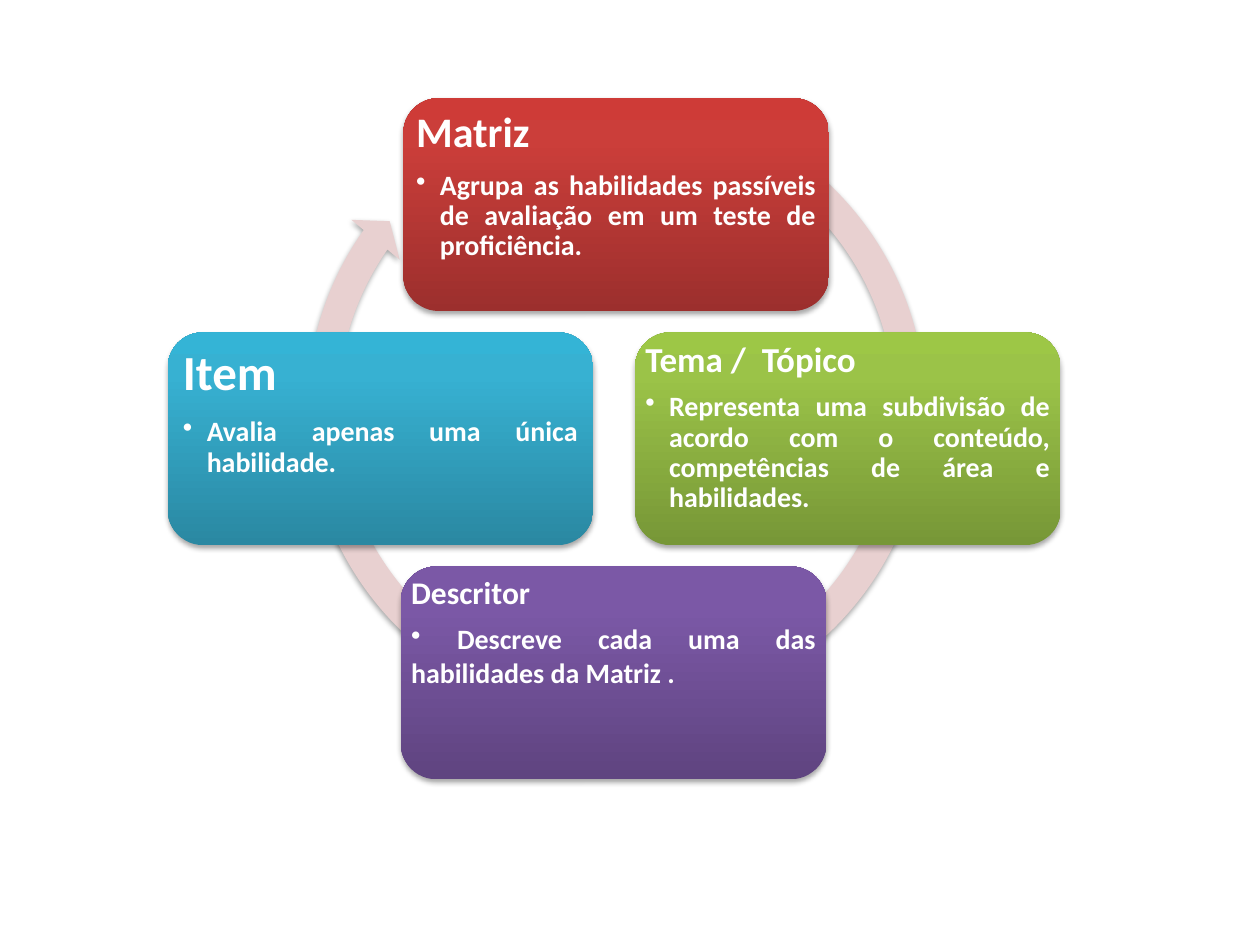
from copy import deepcopy

from pptx import Presentation
from pptx.dml.color import RGBColor
from pptx.enum.shapes import MSO_SHAPE
from pptx.enum.text import MSO_ANCHOR, PP_ALIGN
from pptx.oxml import parse_xml
from pptx.oxml.ns import nsdecls, qn
from pptx.util import Cm, Pt


def rgb(hex_colour):
    return RGBColor.from_string(hex_colour)


def add_soft_shape(preset, left, top, width, height):
    """Add a shape without outline that casts a soft shadow downwards."""
    shape = slide.shapes.add_shape(preset, Cm(left), Cm(top), Cm(width), Cm(height))
    shape.line.fill.background()
    shape.shadow.inherit = False
    shape._element.spPr.find(qn("a:effectLst")).append(parse_xml(
        f'<a:outerShdw {nsdecls("a")} blurRad="{Pt(3.1)}" dist="{Pt(1.8)}" '
        'dir="5400000" rotWithShape="0"><a:srgbClr val="000000">'
        '<a:alpha val="35000"/></a:srgbClr></a:outerShdw>'))
    return shape


CARD_WIDTH, CARD_HEIGHT = 8.58, 4.29
FIRST_ROW, ROW_STEP = 1.98, 4.72
BULLET_INDENT = 0.48

# heading, heading size, body, left, row, inset, bullet indent, body line spacing, gradient
cards = [
    ("Matriz", 24,
     "Agrupa as habilidades passíveis de avaliação em um teste de proficiência.",
     8.13, 0, 0.05, BULLET_INDENT, 0.9, ("9C2F2D", "CB3E3A", "CE3B37")),
    ("Tema /  Tópico", 20,
     "Representa uma subdivisão de acordo com o conteúdo, competências de área e habilidades.",
     12.8, 1, 0, BULLET_INDENT, 0.9, ("779737", "9BC348", "9DC746")),
    ("Descritor", 18,
     " Descreve cada uma das habilidades da Matriz .",
     8.08, 2, 0, 0, 1.0, ("5F4480", "7B58A6", "7C57A8")),
    ("Item", 28,
     "Avalia apenas uma única habilidade.",
     3.38, 1, 0.1, BULLET_INDENT, 0.9, ("2A88A2", "37B1D2", "34B4D6")),
]

prs = Presentation()
prs.slide_width, prs.slide_height = Cm(25.4), Cm(19.05)
slide = prs.slides.add_slide(prs.slide_layouts[6])

cycle_arrow = add_soft_shape(MSO_SHAPE.CIRCULAR_ARROW, 5.87, 1.68, 13.11, 13.11)
cycle_arrow.fill.solid()
cycle_arrow.fill.fore_color.rgb = rgb("E8D0D0")
for index, value in enumerate((0.047, 2.729, 129.011, 179.835, 0.048)):
    cycle_arrow.adjustments[index] = value

for heading, size, body, left, row, inset, indent, spacing, gradient in cards:
    card = add_soft_shape(MSO_SHAPE.ROUNDED_RECTANGLE, left, FIRST_ROW + row * ROW_STEP,
                          CARD_WIDTH, CARD_HEIGHT)
    card.fill.gradient()
    card.fill.gradient_angle = 90
    stop_list = card._element.spPr.find(qn("a:gradFill")).find(qn("a:gsLst"))
    stop_list.append(deepcopy(stop_list[-1]))
    for stop, position, colour in zip(card.fill.gradient_stops, (0, 0.8, 1), gradient):
        stop.position = position
        stop.color.rgb = rgb(colour)

    frame = card.text_frame
    frame.word_wrap = True
    frame.vertical_anchor = MSO_ANCHOR.TOP
    frame.margin_left = frame.margin_right = Cm(inset)
    frame.margin_top = frame.margin_bottom = Cm(inset)

    title = frame.paragraphs[0]
    title.text = heading
    title.alignment = PP_ALIGN.LEFT
    title.line_spacing = 0.9
    title.space_after = Pt(round(0.35 * size, 1))

    description = frame.add_paragraph()
    description.text = body
    description.level = 1
    description.alignment = PP_ALIGN.JUSTIFY
    description.line_spacing = spacing
    properties = description._p.get_or_add_pPr()
    properties.set("marL", str(Cm(indent)))
    properties.set("indent", str(-Cm(indent)))
    properties.append(parse_xml(f'<a:buChar {nsdecls("a")} char="•"/>'))

    for paragraph, points in ((title, size), (description, 16)):
        paragraph.font.name = "Calibri"
        paragraph.font.size = Pt(points)
        paragraph.font.bold = True
        paragraph.font.color.rgb = rgb("FFFFFF")

prs.save("out.pptx")
